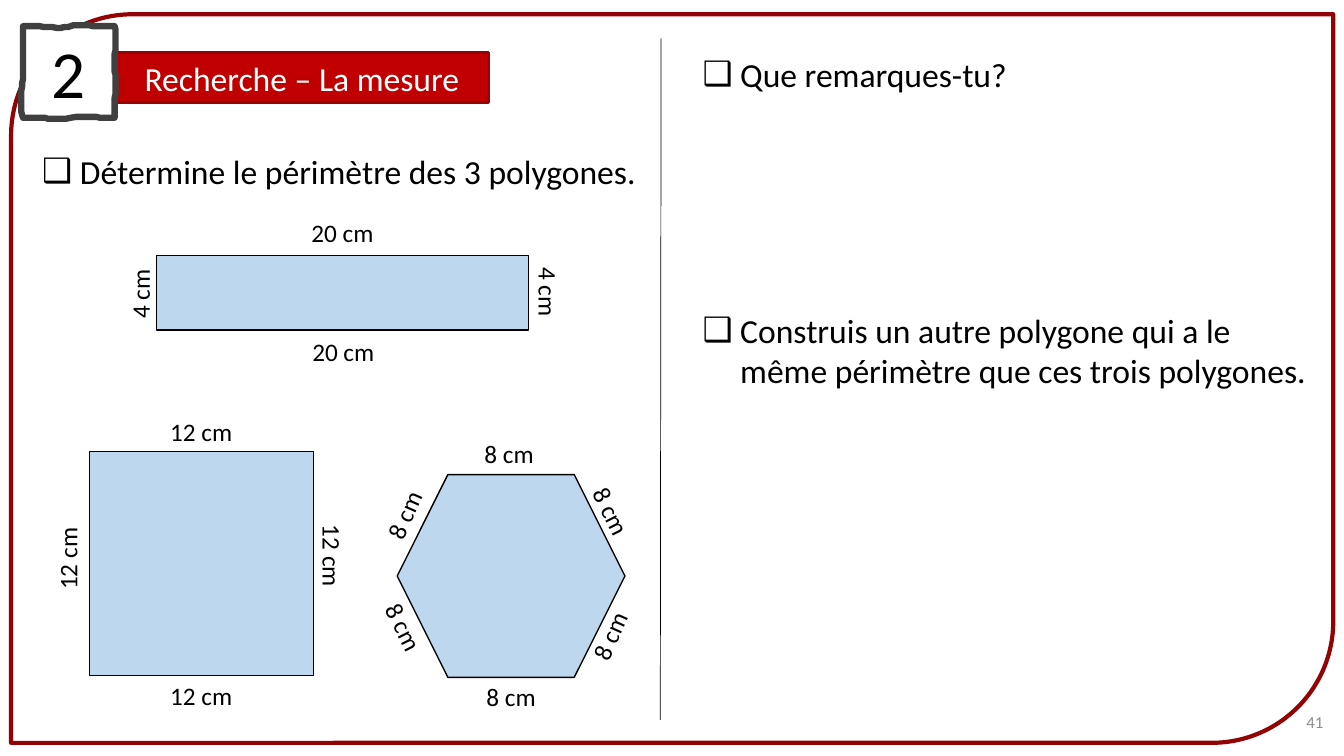
from dataclasses import dataclass

from lxml import etree
from pptx import Presentation
from pptx.dml.color import RGBColor
from pptx.enum.shapes import MSO_CONNECTOR, MSO_SHAPE
from pptx.enum.text import MSO_ANCHOR, MSO_AUTO_SIZE, PP_ALIGN
from pptx.oxml.ns import qn
from pptx.util import Cm, Pt

LINE = MSO_CONNECTOR.STRAIGHT
FRAME, RECT, HEX = MSO_SHAPE.ROUND_2_DIAG_RECTANGLE, MSO_SHAPE.RECTANGLE, MSO_SHAPE.HEXAGON
TOP, MIDDLE = MSO_ANCHOR.TOP, MSO_ANCHOR.MIDDLE
LEFT, CENTER, RIGHT = PP_ALIGN.LEFT, PP_ALIGN.CENTER, PP_ALIGN.RIGHT
FIXED = MSO_AUTO_SIZE.NONE
BLACK, WHITE, RED, DARK, BLUE = "000000", "FFFFFF", "C00000", "920305", "BDD7EE"

Box = tuple[float, float, float, float]
Point = tuple[float, float]


@dataclass
class Label:
    x: float  # centre
    y: float
    turn: float = 0


@dataclass
class Figure:
    kind: int
    box: Box
    sides: dict[str, list[Label]]


@dataclass
class Task:
    slot: int  # placeholder index
    box: Box
    text: str


FIGURES = [
    Figure(RECT, (3.95, 6.44, 9.37, 1.88), {
        "20 cm": [Label(8.64, 5.87), Label(8.66, 8.86)],
        "4 cm": [Label(3.53, 7.39, 270), Label(13.82, 7.37, 90)]}),
    Figure(RECT, (2.26, 11.38, 5.64, 5.64), {
        "12 cm": [Label(5.08, 10.87), Label(5.08, 17.53),
                  Label(1.7, 14.07, 270), Label(8.38, 14.02, 90)]}),
    Figure(HEX, (10.01, 11.96, 5.74, 5.11), {
        "8 cm": [Label(12.85, 11.43), Label(12.9, 17.55),
                 Label(10.19, 12.95, 293.9), Label(15.37, 16, 293.9),
                 Label(10.19, 15.82, 63.3), Label(15.42, 12.9, 63.3)]}),
]
TASKS = [
    Task(1, (0.81, 3.68, 16.26, 1.27), "Détermine le périmètre des 3 polygones."),
    Task(2, (17.45, 1.24, 13.64, 2.31), "Que remarques-tu?"),
    Task(4, (17.45, 7.67, 15.93, 2.31),
         "Construis un autre polygone qui a le même périmètre que ces trois polygones."),
]
# Wavy badge edge in percent of its side: two handles and an end per curve
WAVES = [
    ((15, -1), (41, 4), (52, 0)), ((64, -4), (78, 2), (100, 0)),
    ((103, 16), (99, 37), (100, 47)), ((102, 58), (100, 77), (100, 100)),
    ((89, 101), (75, 97), (52, 100)), ((30, 104), (25, 98), (0, 100)),
    ((-5, 87), (0, 63), (0, 52)), ((-1, 41), (1, 11), (0, 0)),
]


def color(code: str) -> RGBColor:
    return RGBColor.from_string(code)


def place(shape, box: Box) -> None:
    shape.left, shape.top, shape.width, shape.height = map(Cm, box)


def paint(shape, fill: str | None, edge: str, width: float) -> None:
    if fill:
        shape.fill.solid()
        shape.fill.fore_color.rgb = color(fill)
    else:
        shape.fill.background()
    shape.line.color.rgb = color(edge)
    shape.line.width = Pt(width)
    shape.shadow.inherit = False


def write(shape, text: str, size: float, ink: str = BLACK, align: int = LEFT,
          anchor: int = TOP, wrap: bool = True, bullet: str = "") -> None:
    frame = shape.text_frame
    frame.auto_size, frame.word_wrap, frame.vertical_anchor = FIXED, wrap, anchor
    frame.text = text
    para = frame.paragraphs[0]
    para.alignment = align
    para.space_before = Pt(0)
    if bullet:
        props = para._p.get_or_add_pPr()
        props.set("marL", str(Cm(0.95)))
        props.set("indent", str(-Cm(0.95)))
        etree.SubElement(props, qn("a:buChar")).set("char", bullet)
    font = para.font
    font.name, font.size, font.bold = "Calibri", Pt(size), False
    font.color.rgb = color(ink)


def add_shape(slide, kind: int, box: Box, fill: str | None, edge: str, width: float) -> None:
    paint(slide.shapes.add_shape(kind, *map(Cm, box)), fill, edge, width)


def add_label(slide, text: str, spot: Label) -> None:
    wide, high = 0.3 * len(text) + 0.58, 1.02
    box = slide.shapes.add_textbox(
        Cm(spot.x - wide / 2), Cm(spot.y - high / 2), Cm(wide), Cm(high))
    box.rotation = spot.turn
    write(box, text, 18, wrap=False)


def trace(waves: list[tuple[Point, Point, Point]], steps: int = 12) -> list[Point]:
    start, points = (0, 0), []
    for one, two, end in waves:
        for step in range(1, steps + 1):
            t = step / steps
            u = 1 - t
            points.append(tuple(
                u**3 * a + 3 * u * u * t * b + 3 * u * t * t * c + t**3 * d
                for a, b, c, d in zip(start, one, two, end)))
        start = end
    return points


def add_badge(slide, text: str) -> None:
    pen = slide.shapes.build_freeform(0, 0, scale=Cm(2.31) / 100)
    pen.add_line_segments(trace(WAVES), close=True)
    badge = pen.convert_to_shape(Cm(0.58), Cm(0.66))
    paint(badge, WHITE, "404040", 4.5)
    write(badge, text, 48, align=CENTER, anchor=MIDDLE)


def main() -> None:
    deck = Presentation()
    deck.slide_width, deck.slide_height = Cm(33.87), Cm(19.05)
    slide = deck.slides.add_slide(deck.slide_layouts[4])

    # Frame, title banner and number badge
    add_shape(slide, FRAME, (0.28, 0.36, 33.32, 18.36), None, DARK, 3)
    title = slide.shapes.title
    place(title, (2.9, 1.32, 9.42, 1.27))
    title.fill.solid()
    title.fill.fore_color.rgb = color(RED)
    title.line.color.rgb = color(DARK)
    title.line.width = Pt(2.25)
    write(title, "Recherche – La mesure", 24, WHITE, CENTER, MIDDLE)
    add_badge(slide, "2")

    # Tasks
    slots = {slot.placeholder_format.idx: slot for slot in slide.placeholders}
    for task in TASKS:
        place(slots[task.slot], task.box)
        write(slots[task.slot], task.text, 24, bullet="❑")
    spare = slots[3].element
    spare.getparent().remove(spare)

    # Polygons with their side lengths
    for figure in FIGURES:
        add_shape(slide, figure.kind, figure.box, BLUE, BLACK, 1)
        for text, spots in figure.sides.items():
            for spot in spots:
                add_label(slide, text, spot)

    # Divider
    rule = slide.shapes.add_connector(LINE, Cm(16.66), Cm(0.97), Cm(16.64), Cm(18.14))
    rule.line.color.rgb = color(BLACK)
    rule.line.width = Pt(0.5)
    etree.SubElement(rule._element.spPr, qn("a:effectLst"))

    # Page number
    page = slide.shapes.add_textbox(Cm(31.65), Cm(17.6), Cm(2.03), Cm(1.45))
    frame = page.text_frame
    frame.margin_left = frame.margin_right = frame.margin_top = frame.margin_bottom = Cm(0.33)
    write(page, "41", 12, "8C8C8C", RIGHT)

    deck.save("out.pptx")


if __name__ == "__main__":
    main()
